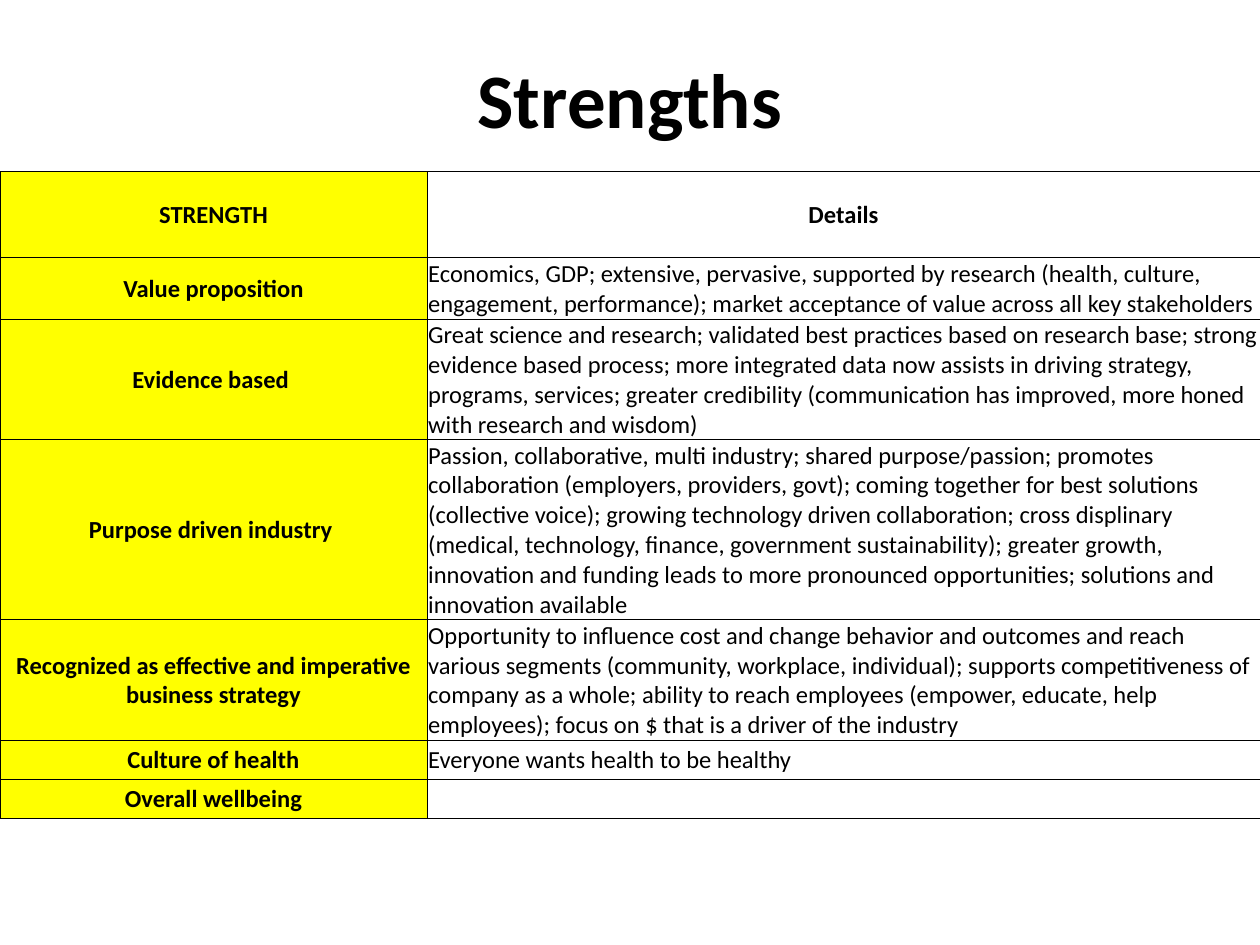
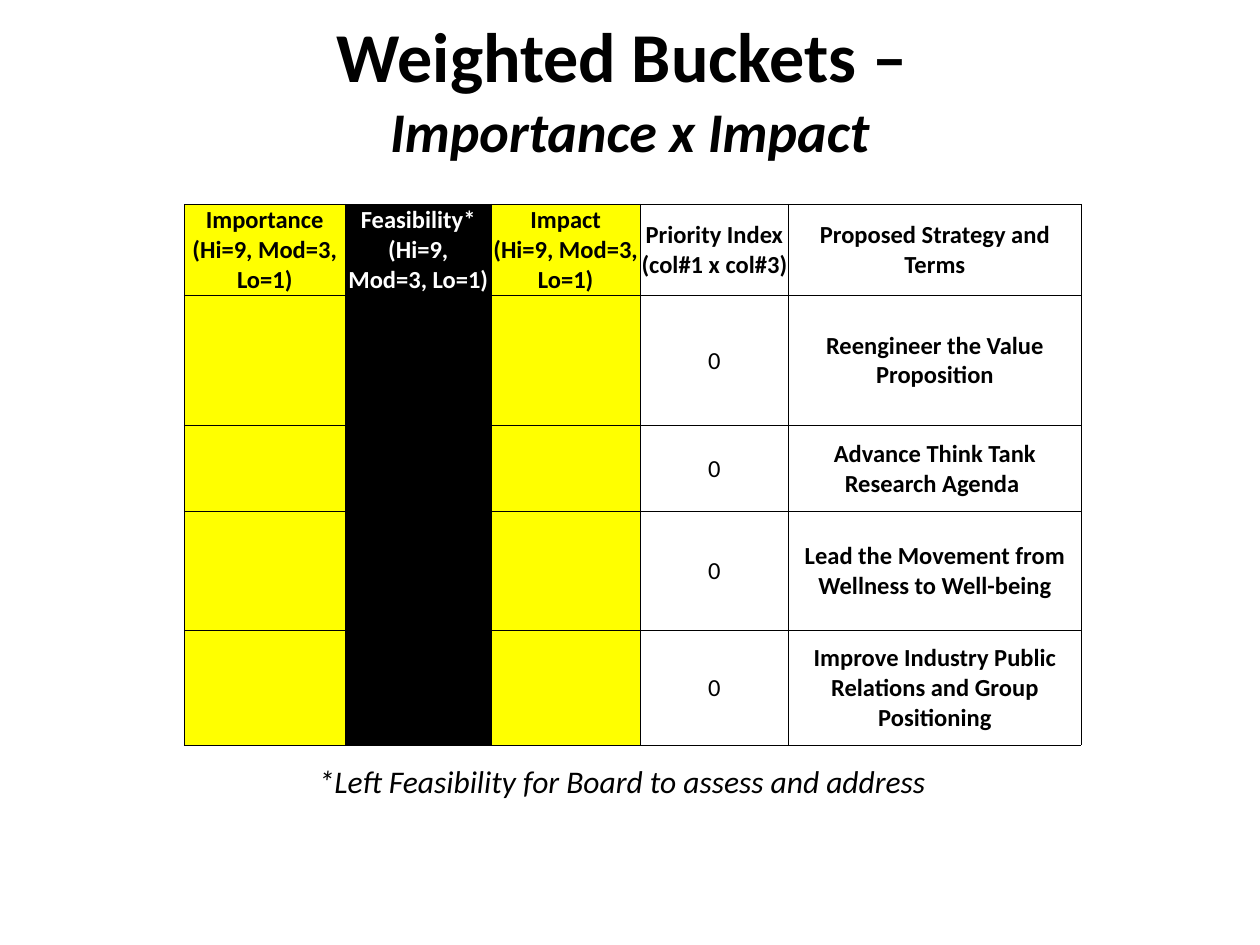
from copy import deepcopy
from dataclasses import dataclass
from typing import Sequence

from lxml.etree import SubElement
from pptx import Presentation
from pptx.dml.color import RGBColor
from pptx.enum.text import MSO_ANCHOR, MSO_AUTO_SIZE, PP_ALIGN
from pptx.oxml.ns import qn
from pptx.util import Pt


@dataclass(frozen=True)
class Theme:
    font: str = "Calibri"
    black: str = "000000"
    white: str = "FFFFFF"
    yellow: str = "FFFF00"
    title: float = 44
    long_title: float = 40
    subtitle: float = 32
    note: float = 18
    body: float = 14
    border: float = 0.5
    cell_margin: float = 0.72


THEME = Theme()


@dataclass(frozen=True)
class Column:
    width: float
    fill: str = THEME.white
    color: str = THEME.black
    bold: bool = True
    align: PP_ALIGN = PP_ALIGN.CENTER


@dataclass(frozen=True)
class Row:
    height: float
    texts: Sequence[str]


@dataclass(frozen=True)
class Grid:
    left: float
    top: float
    columns: Sequence[Column]
    rows: Sequence[Row]


STRENGTHS = Grid(
    left=0,
    top=98,
    columns=[Column(244, fill=THEME.yellow), Column(476, bold=False, align=PP_ALIGN.LEFT)],
    rows=[
        Row(49, ["STRENGTH", "Details"]),
        Row(35.3, ["Value proposition",
                   "Economics, GDP; extensive, pervasive, supported by research (health, culture, "
                   "engagement, performance); market acceptance of value across all key stakeholders"]),
        Row(64.8, ["Evidence based ",
                   "Great science and research; validated best practices based on research base; "
                   "strong evidence based process; more integrated data now assists in driving "
                   "strategy, programs, services; greater credibility (communication has improved, "
                   "more honed with research and wisdom)"]),
        Row(86.4, ["Purpose driven industry ",
                   "Passion, collaborative, multi industry; shared purpose/passion; promotes "
                   "collaboration (employers, providers, govt); coming together for best solutions "
                   "(collective voice); growing technology driven collaboration; cross displinary "
                   "(medical, technology, finance, government sustainability); greater growth, "
                   "innovation and funding leads to more pronounced opportunities; solutions and "
                   "innovation available"]),
        Row(64.8, ["Recognized as effective and imperative business strategy",
                   "Opportunity to influence cost and change behavior and outcomes and reach various "
                   "segments (community, workplace, individual); supports competitiveness of company "
                   "as a whole; ability to reach employees (empower, educate, help employees); focus "
                   "on $ that is a driver of the industry"]),
        Row(22.3, ["Culture of health", "Everyone wants health to be healthy"]),
        Row(22.3, ["Overall wellbeing", ""]),
    ],
)

SCALE = "\n(Hi=9, Mod=3, Lo=1)"
STRATEGIES = [
    (74.3, "Reengineer the Value Proposition"),
    (49.3, "Advance Think Tank Research Agenda "),
    (68, "Lead the Movement from Wellness to Well-being"),
    (65.6, "Improve Industry Public Relations and Group Positioning"),
]
BUCKETS = Grid(
    left=105.3,
    top=116.7,
    columns=[
        Column(92, fill=THEME.yellow),
        Column(83.5, fill=THEME.black, color=THEME.white),
        Column(85, fill=THEME.yellow),
        Column(85, bold=False),
        Column(167),
    ],
    rows=[
        Row(41.8, ["Importance" + SCALE, "Feasibility*" + SCALE, "Impact" + SCALE,
                   "Priority Index (col#1 x col#3)", "Proposed Strategy and Terms"]),
        *(Row(height, ["", "", "", "0", strategy]) for height, strategy in STRATEGIES),
    ],
)


def add_text(p, text: str, *, size: float, color: str = THEME.black, bold: bool = False,
             italic: bool = False, align: PP_ALIGN = PP_ALIGN.LEFT) -> None:
    p.alignment = align
    for i, line in enumerate(text.split("\n")):
        if i:
            p._p.add_br().insert(0, deepcopy(r._r.rPr))
        r = p.add_run()
        r.text = line
        font = r.font
        font.name, font.size = THEME.font, Pt(size)
        font.bold, font.italic = bold, italic
        font.color.rgb = RGBColor.from_string(color)


def place_title(s, top: float, height: float):
    sp = s.shapes.title
    sp.left, sp.top, sp.width, sp.height = Pt(0), Pt(top), Pt(720), Pt(height)
    tf = sp.text_frame
    tf.auto_size = MSO_AUTO_SIZE.NONE
    tf.vertical_anchor = MSO_ANCHOR.MIDDLE
    return tf.paragraphs[0]


def add_borders(cell) -> None:
    tc_pr = cell._tc.get_or_add_tcPr()
    for side in ("L", "R", "T", "B"):
        ln = SubElement(tc_pr, qn(f"a:ln{side}"), w=str(Pt(THEME.border)))
        fill = SubElement(ln, qn("a:solidFill"))
        SubElement(fill, qn("a:srgbClr"), val=THEME.black)


def add_grid(s, grid: Grid) -> None:
    width = sum(column.width for column in grid.columns)
    height = sum(row.height for row in grid.rows)
    table = s.shapes.add_table(len(grid.rows), len(grid.columns), Pt(grid.left), Pt(grid.top),
                               Pt(width), Pt(height)).table
    table.first_row = table.horz_banding = False
    for i, column in enumerate(grid.columns):
        table.columns[i].width = Pt(column.width)
    for i, row in enumerate(grid.rows):
        table.rows[i].height = Pt(row.height)
        for j, (column, text) in enumerate(zip(grid.columns, row.texts)):
            cell = table.cell(i, j)
            cell.margin_left = cell.margin_right = cell.margin_top = Pt(THEME.cell_margin)
            cell.margin_bottom = Pt(0)
            cell.vertical_anchor = MSO_ANCHOR.MIDDLE
            add_borders(cell)
            cell.fill.solid()
            cell.fill.fore_color.rgb = RGBColor.from_string(column.fill)
            header = i == 0
            add_text(cell.text_frame.paragraphs[0], text, size=THEME.body, color=column.color,
                     bold=header or column.bold,
                     align=PP_ALIGN.CENTER if header else column.align)


def add_note(s, text: str) -> None:
    tf = s.shapes.add_textbox(Pt(175), Pt(432), Pt(367), Pt(29)).text_frame
    tf.word_wrap = False
    tf.auto_size = MSO_AUTO_SIZE.SHAPE_TO_FIT_TEXT
    add_text(tf.paragraphs[0], text, size=THEME.note, italic=True)


def build_strengths(prs) -> None:
    s = prs.slides.add_slide(prs.slide_layouts[5])
    p = place_title(s, 21.6, 69)
    add_text(p, "Strengths", size=THEME.title, bold=True, align=PP_ALIGN.CENTER)
    add_grid(s, STRENGTHS)


def build_buckets(prs) -> None:
    s = prs.slides.add_slide(prs.slide_layouts[5])
    p = place_title(s, 0, 101)
    add_text(p, "Weighted Buckets – \n", size=THEME.long_title, bold=True, align=PP_ALIGN.CENTER)
    add_text(p, "Importance x Impact", size=THEME.subtitle, bold=True, italic=True,
             align=PP_ALIGN.CENTER)
    add_grid(s, BUCKETS)
    add_note(s, "*Left Feasibility for Board to assess and address")


def main() -> None:
    prs = Presentation()
    prs.slide_width, prs.slide_height = Pt(720), Pt(540)
    build_strengths(prs)
    build_buckets(prs)
    prs.save("out.pptx")


if __name__ == "__main__":
    main()
